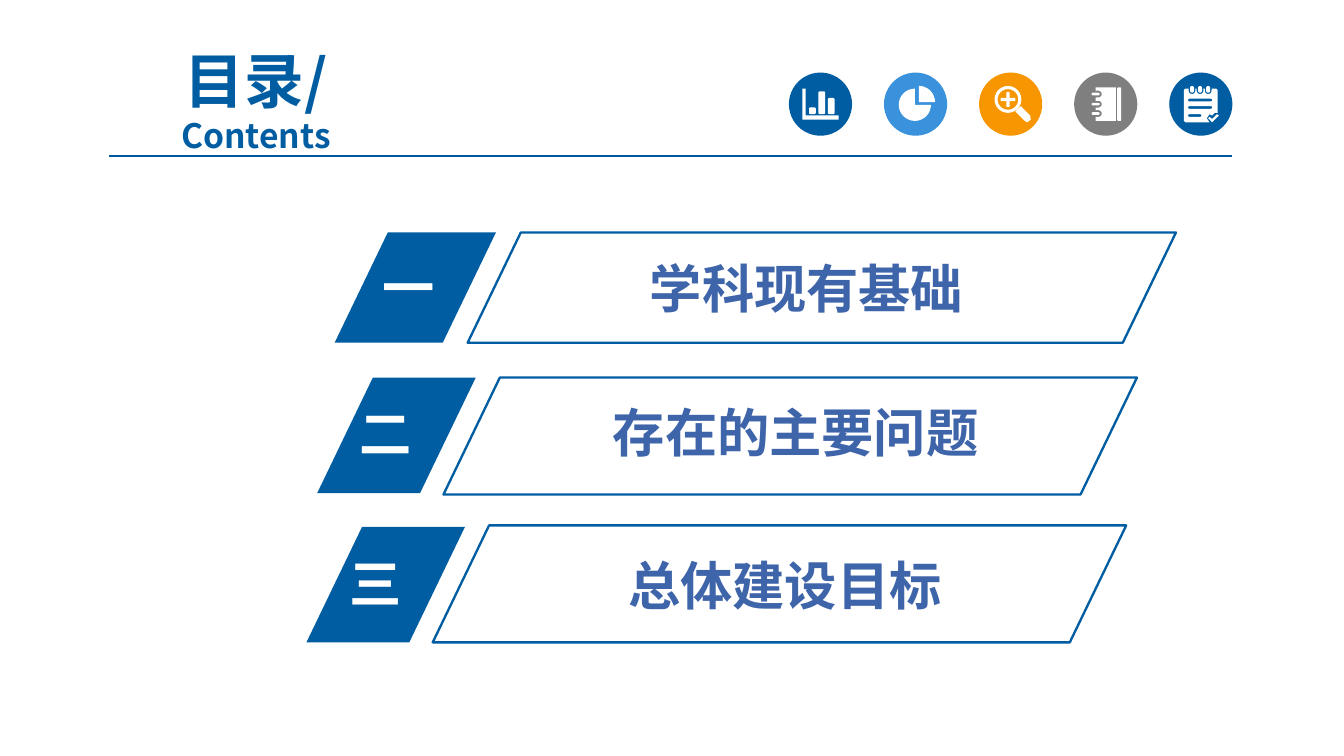
import math

from lxml import etree
from pptx import Presentation
from pptx.dml.color import RGBColor
from pptx.enum.shapes import MSO_CONNECTOR, MSO_SHAPE
from pptx.enum.text import MSO_ANCHOR, PP_ALIGN
from pptx.oxml.ns import qn
from pptx.util import Inches, Pt

STRAIGHT = MSO_CONNECTOR.STRAIGHT
PARALLELOGRAM, OVAL = MSO_SHAPE.PARALLELOGRAM, MSO_SHAPE.OVAL
LEFT, CENTER = PP_ALIGN.LEFT, PP_ALIGN.CENTER
TOP, MIDDLE = MSO_ANCHOR.TOP, MSO_ANCHOR.MIDDLE

COLORS = {"blue": "005DA2", "rule": "005B9E", "heading": "3E64A9", "sky": "3992DB",
          "orange": "F79600", "gray": "7F7F7F", "white": "FFFFFF"}


def color(name):
    return RGBColor.from_string(COLORS[name])


def write_runs(paragraph, runs, font, fill, align=LEFT):
    """Write bold (text, size) runs, one line each, into a paragraph."""
    paragraph.alignment = align
    # Punctuation wraps to the next line and does not hang past the margin
    paragraph._p.get_or_add_pPr().set("hangingPunct", "0")
    for index, (text, size) in enumerate(runs):
        if index:
            paragraph.add_line_break()
        run = paragraph.add_run()
        run.text = text
        run.font.name, run.font.size, run.font.bold = font, Pt(size), True
        run.font.color.rgb = color(fill)
        east_asian = etree.SubElement(run.font._element, qn("a:ea"))
        east_asian.set("typeface", font)


# Icon outlines, in hundredths of an inch from the corner of their circle
def bar(left, top, right, bottom, radius=1):
    corners = [(right, bottom, -1, -1, 0), (left, bottom, 1, -1, 90),
               (left, top, 1, 1, 180), (right, top, -1, 1, 270)]
    return [point for x, y, dx, dy, start in corners
            for point in arc(x + dx * radius, y + dy * radius, radius, start, start + 90, 4)]


def arc(x, y, radius, start, end, steps=24):
    angles = [math.radians(start + (end - start) * i / steps) for i in range(steps + 1)]
    return [(x + radius * math.cos(a), y + radius * math.sin(a)) for a in angles]


def column_chart():
    axis = [(10, 12), (12.5, 12), (12.5, 32), (37, 32), (37, 35), (10, 35)]
    return [axis, bar(15, 26, 20, 31), bar(22, 14, 27, 31), bar(29, 19, 34, 31)]


def pie_chart():
    return [[(26, 22)] + arc(26, 22, 12, -90, 0), [(23, 24)] + arc(23, 24, 12, 0, 270)]


def magnifier():
    x, y, long, short = 21.5, 20, 5.5, 1.2
    plus = [(x - long, y - short), (x - short, y - short), (x - short, y - long),
            (x + short, y - long), (x + short, y - short), (x + long, y - short),
            (x + long, y + short), (x + short, y + short), (x + short, y + long),
            (x - short, y + long), (x - short, y + short), (x - long, y + short)]
    handle = [(27, 29), (31, 25), (38, 32), (38.5, 35), (36, 37), (34, 36)]
    return [arc(x, y, 10, 0, 360), arc(x, y, 7.7, 0, 360), plus, handle]


def notebook():
    rings = [30.5, 23.5, 16]
    cover = [(31, 11), (31, 36), (16, 36)]
    for y in rings:
        cover += [(16, y + 2.5)] + arc(18, y, 2.5, 90, -90) + [(16, y - 2.5)]
    cover.append((16, 11))
    return [cover, bar(32, 11, 35, 36)] + [bar(13, y - 1, 19, y + 1) for y in rings]


def notepad():
    rings = [17, 23, 29]
    page = [(12, 12)]
    for x in rings:
        page += [(x - 2.5, 12)] + arc(x, 13.5, 2.5, 180, 0) + [(x + 2.5, 12)]
    page += [(35, 12), (36, 13), (36, 30), (34, 30), (32, 32), (30, 31),
             (28, 34), (30, 37), (12, 37), (11, 36), (11, 13)]
    lines = [bar(14, y, right, y + 2) for y, right in [(19.5, 32), (25, 32), (31, 24)]]
    check = [(29, 34), (30, 33), (32, 34.5), (35.5, 31), (37, 32), (32, 37)]
    return [page, check] + lines + [bar(x - 1.5, 10, x + 1.5, 15, 1.5) for x in rings]


class SlideBuilder:
    def __init__(self, slide):
        self.slide = slide
        self.heading_font, self.number_font, self.title_font = (
            "Calibri", "Roboto Condensed", "Noto Sans CJK SC")

    def text(self, left, top, width, height, runs, anchor=TOP, margin=0.1, **text_format):
        box = self.slide.shapes.add_textbox(*map(Inches, (left, top, width, height)))
        frame = box.text_frame
        frame.word_wrap, frame.vertical_anchor = True, anchor
        frame.margin_left = frame.margin_right = Inches(margin)
        frame.margin_top = frame.margin_bottom = Inches(margin / 2)
        write_runs(frame.paragraphs[0], runs, **text_format)

    def shape(self, kind, left, top, width, height, fill=None, line=None):
        shape = self.slide.shapes.add_shape(kind, *map(Inches, (left, top, width, height)))
        if kind == PARALLELOGRAM:
            shape.adjustments[0] = 0.482
        self.paint(shape, fill, line)

    def paint(self, shape, fill=None, line=None):
        shape.shadow.inherit = False
        if fill:
            shape.fill.solid()
            shape.fill.fore_color.rgb = color(fill)
        else:
            shape.fill.background()
        if line:
            shape.line.color.rgb, shape.line.width = color(line), Pt(1.25)
        else:
            shape.line.fill.background()

    def rule(self, left, right, y):
        line = self.slide.shapes.add_connector(
            STRAIGHT, Inches(left), Inches(y), Inches(right), Inches(y))
        line.line.color.rgb, line.line.width = color("rule"), Pt(0.75)
        etree.SubElement(line._element.spPr, qn("a:effectLst"))

    def icon(self, left, top, fill, contours):
        self.shape(OVAL, left, top, 0.47, 0.47, fill=fill)
        outlines = [[(Inches(left + x / 100), Inches(top + y / 100)) for x, y in contour]
                    for contour in contours]
        builder = self.slide.shapes.build_freeform(*outlines[0][0])
        for index, outline in enumerate(outlines):
            if index:
                builder.move_to(*outline[0])
            builder.add_line_segments(outline[1:], close=True)
        self.paint(builder.convert_to_shape(), fill="white")

    def entry(self, number, heading, tab, number_box, frame, heading_box):
        self.shape(PARALLELOGRAM, *tab, fill="blue")
        self.text(*number_box, [(number, 28)], font=self.number_font, fill="white")
        self.text(*heading_box, [(heading, 28)], margin=0.07,
                  font=self.heading_font, fill="heading", align=CENTER)
        self.shape(PARALLELOGRAM, *frame, line="blue")


def main():
    presentation = Presentation()
    presentation.slide_width = Inches(10)
    presentation.slide_height = Inches(10 * 9 / 16)
    page = SlideBuilder(presentation.slides.add_slide(presentation.slide_layouts[6]))

    # Title and rule
    page.text(0.67, 0.47, 2.47, 0.54, [("目录/", 32), ("Contents", 18)], anchor=MIDDLE,
              font=page.title_font, fill="blue", align=CENTER)
    page.rule(0.81, 9.17, 1.16)

    # Contents entries
    page.entry("一、", "学科现有基础", (2.49, 1.73, 1.2, 0.82), (2.75, 1.85, 0.94, 0.57),
               (3.48, 1.73, 5.27, 0.82), (3.66, 1.87, 4.68, 0.55))
    page.entry("二、", "存在的主要问题", (2.36, 2.81, 1.18, 0.86), (2.58, 2.94, 0.96, 0.57),
               (3.3, 2.81, 5.16, 0.87), (3.72, 2.94, 4.4, 0.55))
    page.entry("三、", "总体建设目标", (2.28, 3.92, 1.18, 0.86), (2.5, 4.05, 0.96, 0.57),
               (3.22, 3.91, 5.16, 0.87), (3.64, 4.08, 4.4, 0.55))

    # Row of round icons
    icons = [("blue", column_chart), ("sky", pie_chart), ("orange", magnifier),
             ("gray", notebook), ("blue", notepad)]
    first, last = 5.87, 8.7
    step = (last - first) / (len(icons) - 1)
    for index, (fill, outline) in enumerate(icons):
        page.icon(first + index * step, 0.54, fill, outline())

    presentation.save("out.pptx")


if __name__ == "__main__":
    main()
